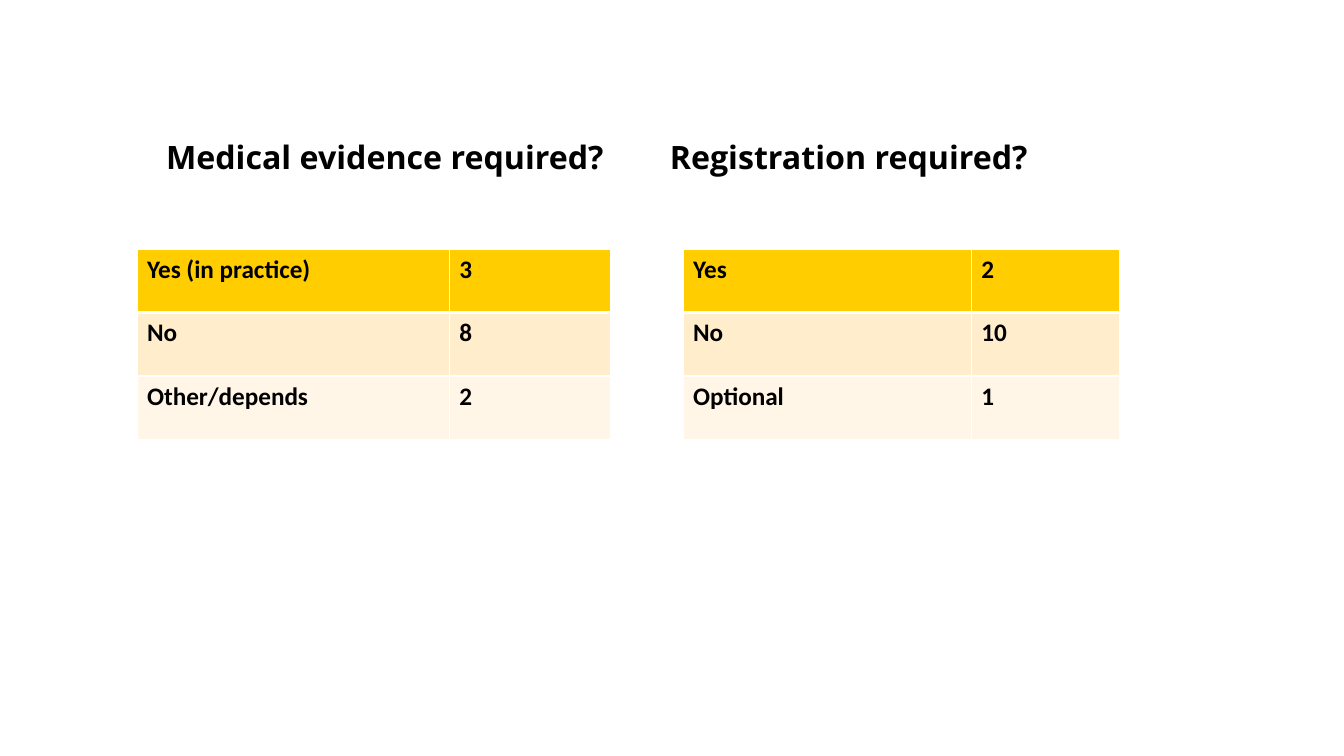
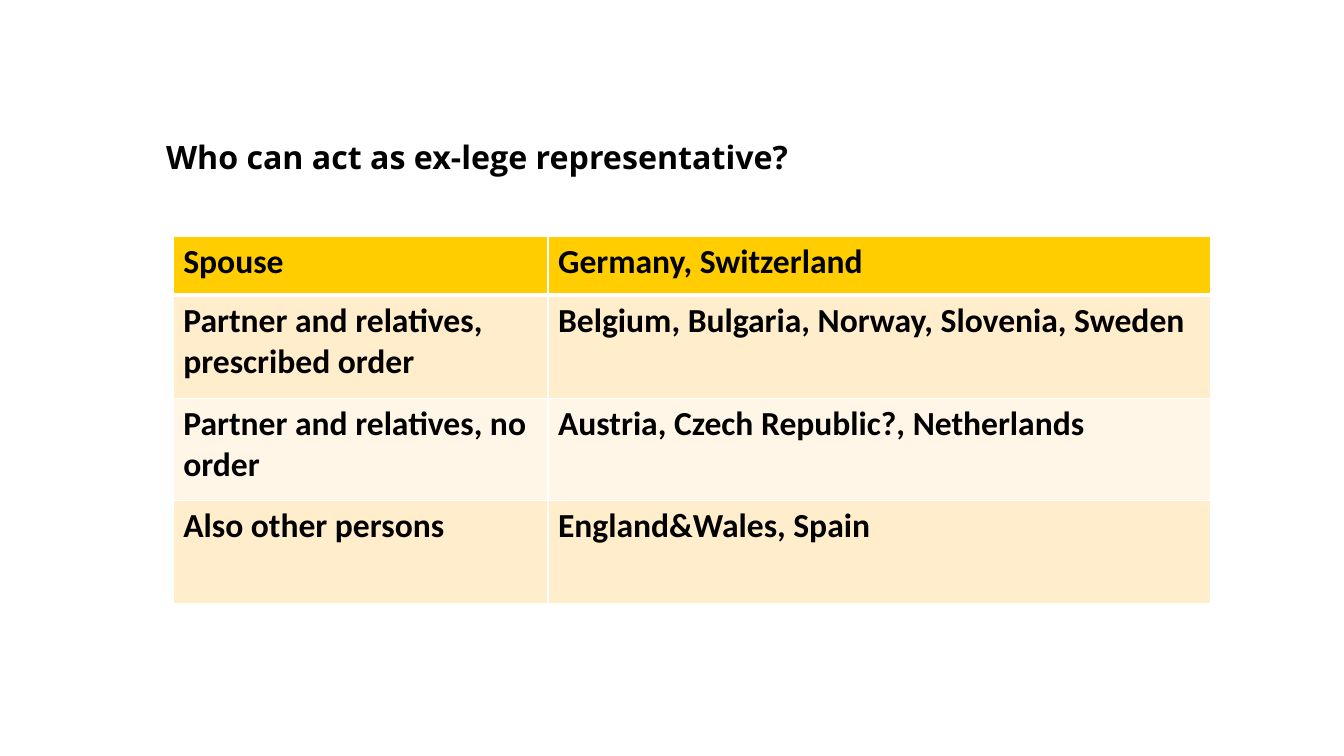
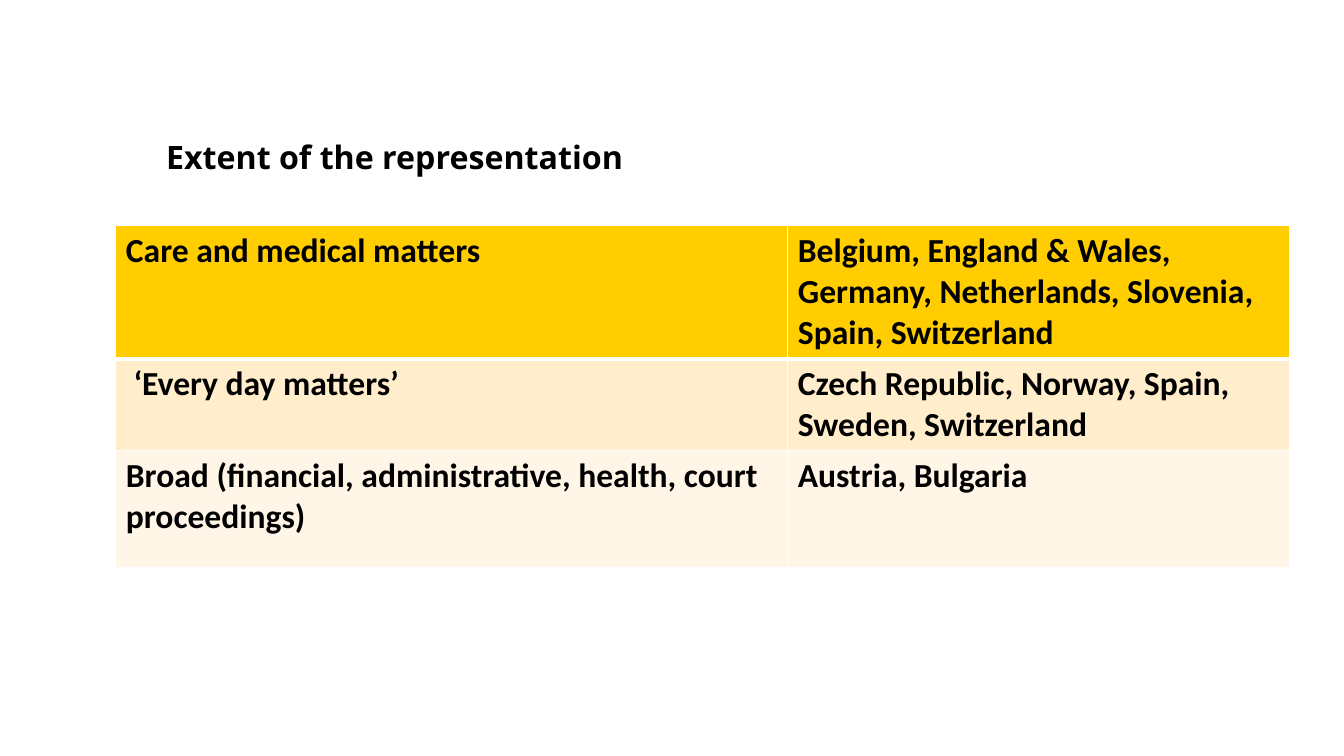
from dataclasses import dataclass

from lxml.etree import SubElement
from pptx import Presentation
from pptx.dml.color import RGBColor
from pptx.enum.text import MSO_ANCHOR, PP_ALIGN
from pptx.oxml.ns import qn
from pptx.util import Inches, Pt


@dataclass(frozen=True)
class Theme:
    ink: str = "000000"
    paper: str = "FFFFFF"
    header: str = "FFCD00"
    bands: tuple = ("FFEDCC", "FFF6E7")
    title_font: str = "Open Sans"
    table_font: str = "Calibri"
    title_size: int = 23
    small_table: int = 18
    large_table: int = 24
    rule: int = 1
    header_rule: int = 3


THEME = Theme()


def write(frame, text, *, font, size, color=THEME.ink, bold=True, tab=None):
    """Put one formatted paragraph in a text frame; tab is a stop in inches."""
    frame.word_wrap = True
    paragraph = frame.paragraphs[0]
    paragraph.alignment = PP_ALIGN.LEFT
    if tab is not None:
        stops = SubElement(paragraph._p.get_or_add_pPr(), qn("a:tabLst"))
        SubElement(stops, qn("a:tab"), pos=str(Inches(tab)), algn="l")
    run = paragraph.add_run()
    run.text = text
    run.font.name = font
    run.font.size = Pt(size)
    run.font.bold = bold
    run.font.color.rgb = RGBColor.from_string(color)


def add_title(slide, text, tab=None):
    box = slide.shapes.add_textbox(
        Inches(1.55), Inches(1.31), Inches(9.26), Inches(1.37))
    box.text_frame.vertical_anchor = MSO_ANCHOR.TOP
    write(box.text_frame, text, font=THEME.title_font,
          size=THEME.title_size, tab=tab)


def add_borders(cell, row):
    """Draw white rules, with a heavier one under the header row."""
    widths = {
        "a:lnL": THEME.rule,
        "a:lnR": THEME.rule,
        "a:lnT": THEME.header_rule if row == 1 else THEME.rule,
        "a:lnB": THEME.header_rule if row == 0 else THEME.rule,
    }
    properties = cell._tc.get_or_add_tcPr()
    for side, width in widths.items():
        line = SubElement(properties, qn(side), w=str(Pt(width)))
        fill = SubElement(line, qn("a:solidFill"))
        SubElement(fill, qn("a:srgbClr"), val=THEME.paper)


def add_answers(slide, left, top, widths, heights, answers, size):
    """Add a table with a yellow first row and alternating bands below."""
    table = slide.shapes.add_table(
        len(heights), len(widths), Inches(left), Inches(top),
        Inches(sum(widths)), Inches(sum(heights))).table
    table.horz_banding = False
    for column, width in zip(table.columns, widths):
        column.width = Inches(width)
    for row, (height, texts) in enumerate(zip(heights, answers)):
        table.rows[row].height = Inches(height)
        color = THEME.bands[(row - 1) % 2] if row else THEME.header
        for column, text in enumerate(texts):
            cell = table.cell(row, column)
            add_borders(cell, row)
            cell.fill.solid()
            cell.fill.fore_color.rgb = RGBColor.from_string(color)
            write(cell.text_frame, text, font=THEME.table_font, size=size)


def add_requirements(slide):
    add_title(slide, "Medical evidence required? \tRegistration required?", tab=5)
    evidence = [("Yes (in practice)", "3"), ("No", "8"), ("Other/depends", "2")]
    registration = [("Yes", "2"), ("No", "10"), ("Optional", "1")]
    for left, widths, answers in ((1.36, (3.1, 1.6), evidence),
                                  (6.78, (2.86, 1.47), registration)):
        add_answers(slide, left, 2.47, widths, [0.63] * 3, answers,
                    THEME.small_table)


def add_representatives(slide):
    add_title(slide, "Who can act as ex-lege representative?")
    add_answers(slide, 1.72, 2.35, (3.72, 6.58), [0.58] + [1.02] * 3, [
        ("Spouse", "Germany, Switzerland"),
        ("Partner and relatives, prescribed order",
         "Belgium, Bulgaria, Norway, Slovenia, Sweden"),
        ("Partner and relatives, no order",
         "Austria, Czech Republic?, Netherlands"),
        ("Also other persons", "England&Wales, Spain"),
    ], THEME.large_table)


def add_extent(slide):
    add_title(slide, "Extent of the representation")
    add_answers(slide, 1.15, 2.24, (6.67, 4.98), (1.32, 0.91, 1.16), [
        ("Care and medical matters",
         "Belgium, England & Wales, Germany, Netherlands, Slovenia, Spain, "
         "Switzerland"),
        (" ‘Every day matters’",
         "Czech Republic, Norway, Spain, Sweden, Switzerland"),
        ("Broad (financial, administrative, health, court proceedings)",
         "Austria, Bulgaria"),
    ], THEME.large_table)


def main():
    deck = Presentation()
    deck.slide_width = Inches(13.34)
    deck.slide_height = Inches(7.5)
    blank = deck.slide_layouts[6]
    # One builder for each slide, in order
    for build in (add_requirements, add_representatives, add_extent):
        slide = deck.slides.add_slide(blank)
        slide.background.fill.solid()
        slide.background.fill.fore_color.rgb = RGBColor.from_string(THEME.paper)
        build(slide)
    deck.save("out.pptx")


if __name__ == "__main__":
    main()
